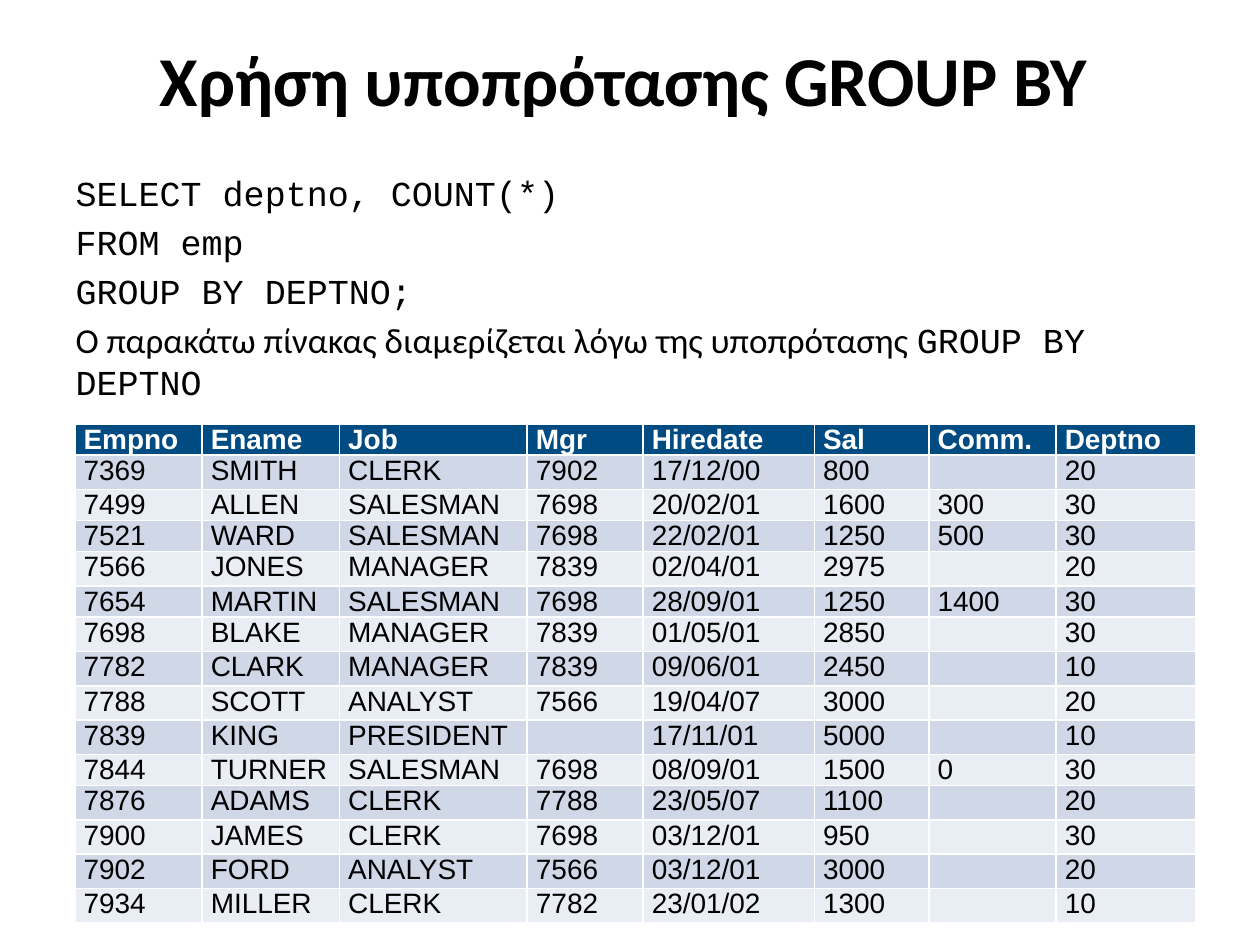
from lxml.etree import SubElement
from pptx import Presentation
from pptx.dml.color import RGBColor
from pptx.enum.text import MSO_ANCHOR, MSO_AUTO_SIZE, PP_ALIGN
from pptx.oxml.ns import qn
from pptx.util import Pt

SANS, MONO, CELL = "Calibri", "Courier New", "Arial"
BLACK, WHITE, NAVY = "000000", "FFFFFF", "004B82"
BANDS = ("D0D8E8", "E9EDF4")
ROW = 17.8
WIDTHS = (72.7, 78.5, 107.3, 66.2, 97.9, 65.5, 72.7, 79.9)

TITLE = "Χρήση υποπρότασης GROUP BY "
LINES = (
    [("SELECT deptno, COUNT(*)", MONO)],
    [("FROM emp", MONO)],
    [("GROUP BY DEPTNO;", MONO)],
    [("Ο παρακάτω πίνακας διαμερίζεται λόγω της υποπρότασης ", SANS),
     ("GROUP BY DEPTNO", MONO)],
)
HEAD = ("Empno", "Ename", "Job", "Mgr", "Hiredate", "Sal", "Comm.", "Deptno")
STAFF = (
    ("7369", "SMITH", "CLERK", "7902", "17/12/00", "800", "", "20"),
    ("7499", "ALLEN", "SALESMAN", "7698", "20/02/01", "1600", "300", "30"),
    ("7521", "WARD", "SALESMAN", "7698", "22/02/01", "1250", "500", "30"),
    ("7566", "JONES", "MANAGER", "7839", "02/04/01", "2975", "", "20"),
    ("7654", "MARTIN", "SALESMAN", "7698", "28/09/01", "1250", "1400", "30"),
    ("7698", "BLAKE", "MANAGER", "7839", "01/05/01", "2850", "", "30"),
    ("7782", "CLARK", "MANAGER", "7839", "09/06/01", "2450", "", "10"),
    ("7788", "SCOTT", "ANALYST", "7566", "19/04/07", "3000", "", "20"),
    ("7839", "KING", "PRESIDENT", "", "17/11/01", "5000", "", "10"),
    ("7844", "TURNER", "SALESMAN", "7698", "08/09/01", "1500", "0", "30"),
    ("7876", "ADAMS", "CLERK", "7788", "23/05/07", "1100", "", "20"),
    ("7900", "JAMES", "CLERK", "7698", "03/12/01", "950", "", "30"),
    ("7902", "FORD", "ANALYST", "7566", "03/12/01", "3000", "", "20"),
    ("7934", "MILLER", "CLERK", "7782", "23/01/02", "1300", "", "10"),
)


def paint(form, tone):
    """Give a fill or font colour format the hex colour."""
    form.rgb = RGBColor.from_string(tone)


def place(shape, left, top, width, height):
    """Move and size a shape in points."""
    shape.left, shape.top = Pt(left), Pt(top)
    shape.width, shape.height = Pt(width), Pt(height)


def add_run(para, text, face, size, tone=BLACK, bold=False):
    """Add one formatted run to a paragraph."""
    run = para.add_run()
    run.text = text
    run.font.name, run.font.size, run.font.bold = face, Pt(size), bold
    paint(run.font.color, tone)


def set_title(shape):
    """Write the centred slide title."""
    place(shape, 36.7, 9.4, 648, 71.3)
    frame = shape.text_frame
    frame.auto_size = MSO_AUTO_SIZE.NONE
    frame.vertical_anchor = MSO_ANCHOR.MIDDLE
    para = frame.paragraphs[0]
    para.alignment = PP_ALIGN.CENTER
    add_run(para, TITLE, SANS, 40, bold=True)


def set_body(shape):
    """Write the query and its remark without bullets."""
    place(shape, 36, 94.3, 648, 153.4)
    frame = shape.text_frame
    frame.auto_size = MSO_AUTO_SIZE.NONE
    for num, line in enumerate(LINES):
        para = frame.add_paragraph() if num else frame.paragraphs[0]
        props = para._p.get_or_add_pPr()
        props.set("marL", "0")
        props.set("indent", "0")
        SubElement(props, qn("a:buNone"))
        for text, face in line:
            add_run(para, text, face, 20)


def set_cell(cell, text, fill, tone, bold):
    """Fill one table cell and write its text."""
    cell.fill.solid()
    paint(cell.fill.fore_color, fill)
    cell.margin_left = cell.margin_right = Pt(5)
    cell.margin_top = cell.margin_bottom = Pt(0)
    para = cell.text_frame.paragraphs[0]
    para.line_spacing = Pt(ROW)
    if text:
        add_run(para, text, CELL, 16, tone, bold)
    else:
        SubElement(para._p, qn("a:endParaRPr"), sz="1600")


def add_grid(slide):
    """Add the staff table with its header and bands."""
    rows = (HEAD, *STAFF)
    frame = slide.shapes.add_table(
        len(rows), len(HEAD), Pt(42.8), Pt(242.2),
        Pt(sum(WIDTHS)), Pt(ROW * len(rows)))
    grid = frame.table
    for col, width in zip(grid.columns, WIDTHS):
        col.width = Pt(width)
    for num, row in enumerate(rows):
        grid.rows[num].height = Pt(ROW)
        fill = BANDS[(num - 1) % 2] if num else NAVY
        tone = BLACK if num else WHITE
        for col, text in enumerate(row):
            set_cell(grid.cell(num, col), text, fill, tone, num == 0)


def main():
    """Build the slide and save it."""
    deck = Presentation()
    deck.slide_width, deck.slide_height = Pt(720), Pt(540)
    slide = deck.slides.add_slide(deck.slide_layouts[1])
    set_title(slide.shapes.title)
    set_body(slide.placeholders[1])
    add_grid(slide)
    deck.save("out.pptx")


if __name__ == "__main__":
    main()
